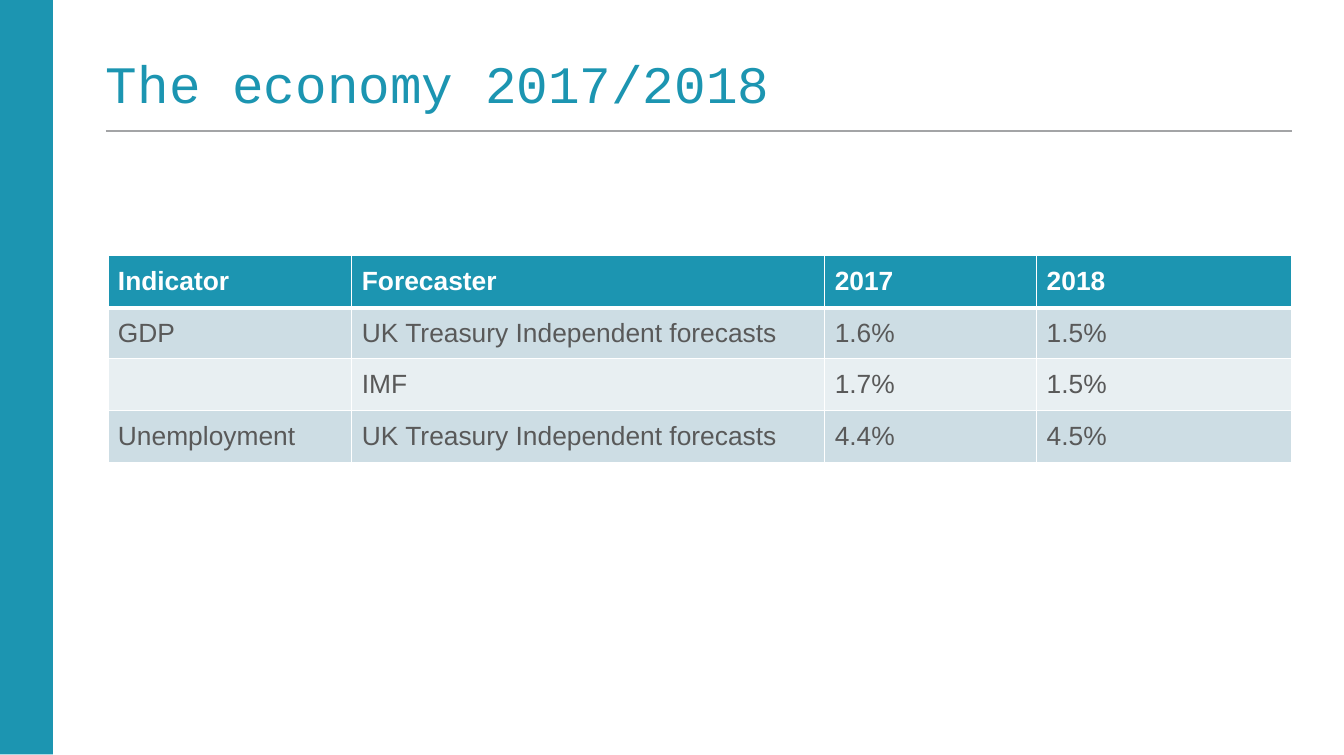
"""Build the slide on UK economic forecasts for 2017 and 2018."""
from lxml import etree
from pptx import Presentation
from pptx.dml.color import RGBColor
from pptx.enum.shapes import MSO_CONNECTOR, MSO_SHAPE
from pptx.enum.text import MSO_ANCHOR, MSO_AUTO_SIZE, PP_ALIGN
from pptx.oxml.ns import qn
from pptx.util import Inches, Pt

PX = 914400 / 94.8
STRAIGHT = MSO_CONNECTOR.STRAIGHT
RECTANGLE = MSO_SHAPE.RECTANGLE
MIDDLE = MSO_ANCHOR.MIDDLE
LEFT = PP_ALIGN.LEFT
NO_AUTOFIT = MSO_AUTO_SIZE.NONE

TEAL = RGBColor(0x1C, 0x95, 0xB1)
GREY = RGBColor(0xA3, 0xA4, 0xA6)
TEXT_GREY = RGBColor(0x59, 0x59, 0x59)
WHITE = RGBColor(0xFF, 0xFF, 0xFF)
BAND_DARK = RGBColor(0xCD, 0xDD, 0xE4)
BAND_LIGHT = RGBColor(0xE8, 0xEF, 0xF2)

COLUMN_WIDTHS = [244, 473, 212, 255]
ROW_HEIGHTS = [52, 51, 52, 52]
FORECASTS = [
    ["Indicator", "Forecaster", "2017", "2018"],
    ["GDP", "UK Treasury Independent forecasts", "1.6%", "1.5%"],
    ["", "IMF", "1.7%", "1.5%"],
    ["Unemployment", "UK Treasury Independent forecasts", "4.4%", "4.5%"],
]


def px(*lengths):
    """Turn pixel lengths into EMU."""
    return [round(length * PX) for length in lengths]


def set_all(target, values):
    """Set each named attribute of the target."""
    for name, value in values.items():
        setattr(target, name, value)


deck = Presentation()
set_all(deck, {"slide_width": Inches(14.18), "slide_height": Inches(7.97)})
page = deck.slides.add_slide(deck.slide_layouts[5])

for bar_height in (755, 166):
    bar = page.shapes.add_shape(RECTANGLE, *px(0, 0, 53, bar_height))
    bar.shadow.inherit = False
    bar.fill.solid()
    bar.fill.fore_color.rgb = TEAL
    bar.line.fill.background()

rule = page.shapes.add_connector(STRAIGHT, *px(106, 131, 1292, 131))
rule.line.color.rgb = GREY
rule.line.width = Pt(1)
etree.SubElement(rule._element.spPr, qn("a:effectLst"))

title = page.shapes.title
title.left, title.top, title.width, title.height = px(106, 60, 1186, 56)
set_all(title.text_frame, {
    "text": "The economy 2017/2018", "word_wrap": True, "auto_size": NO_AUTOFIT,
    "vertical_anchor": MIDDLE, "margin_left": 0, "margin_top": 0,
    "margin_right": 0, "margin_bottom": 0,
})
para = title.text_frame.paragraphs[0]
set_all(para, {"alignment": LEFT, "line_spacing": 0.8, "space_before": Pt(0)})
set_all(para.font, {"name": "Courier New", "size": Pt(40), "bold": False})
para.font.color.rgb = TEAL

frame = page.shapes.add_table(
    len(ROW_HEIGHTS), len(COLUMN_WIDTHS),
    *px(108, 256, sum(COLUMN_WIDTHS), sum(ROW_HEIGHTS)))
table = frame.table
for column, width in zip(table.columns, px(*COLUMN_WIDTHS)):
    column.width = width
for row, height in zip(table.rows, px(*ROW_HEIGHTS)):
    row.height = height

side_margin, end_margin = px(10, 10)
for row_index, texts in enumerate(FORECASTS):
    is_header = row_index == 0
    band = TEAL if is_header else BAND_DARK if row_index % 2 else BAND_LIGHT
    borders = {"lnL": 1, "lnR": 1, "lnT": 3 if row_index == 1 else 1,
               "lnB": 3 if is_header else 1}
    for column_index, text in enumerate(texts):
        cell = table.cell(row_index, column_index)
        set_all(cell, {
            "text": text, "vertical_anchor": MIDDLE,
            "margin_left": side_margin, "margin_right": side_margin,
            "margin_top": end_margin, "margin_bottom": end_margin,
        })
        para = cell.text_frame.paragraphs[0]
        set_all(para.font, {"name": "Arial", "size": Pt(20), "bold": is_header})
        para.font.color.rgb = WHITE if is_header else TEXT_GREY
        properties = cell._tc.get_or_add_tcPr()
        for side, points in borders.items():
            border = etree.SubElement(properties, qn(f"a:{side}"), w=str(Pt(points)))
            fill = etree.SubElement(border, qn("a:solidFill"))
            etree.SubElement(fill, qn("a:srgbClr"), val=str(WHITE))
        cell.fill.solid()
        cell.fill.fore_color.rgb = band

deck.save("out.pptx")
